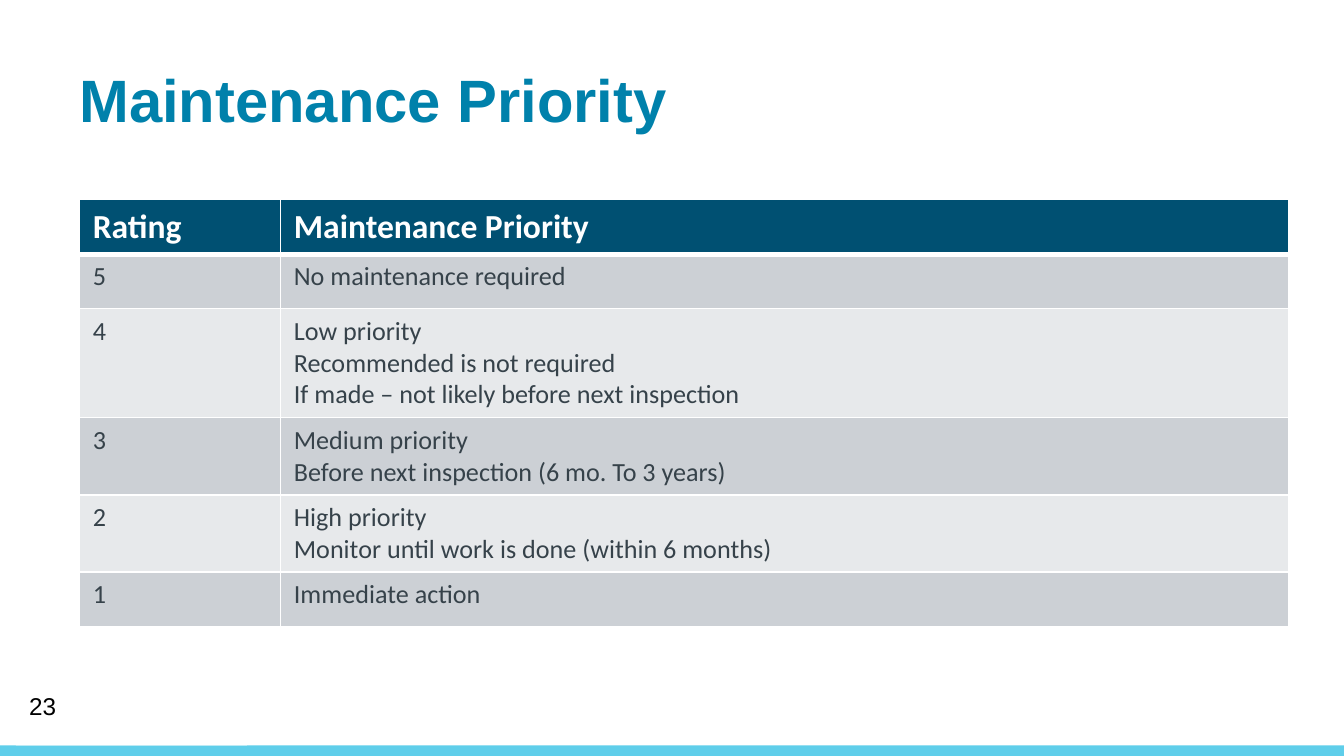
from pptx import Presentation
from pptx.dml.color import RGBColor
from pptx.enum.shapes import MSO_SHAPE as Shape
from pptx.enum.text import MSO_ANCHOR as Anchor
from pptx.oxml import parse_xml
from pptx.oxml.ns import nsdecls
from pptx.util import Cm, Pt

WHITE = RGBColor(0xFF, 0xFF, 0xFF)
BLACK = RGBColor(0x00, 0x00, 0x00)
SKY = RGBColor(0x5F, 0xCE, 0xEA)
BLUE = RGBColor(0x00, 0x81, 0xAB)
NAVY = RGBColor(0x00, 0x50, 0x72)
SLATE = RGBColor(0x36, 0x42, 0x4A)
BANDS = (RGBColor(0xE7, 0xE9, 0xEB), RGBColor(0xCC, 0xD0, 0xD5))

TITLE_FONT = {"name": "Arial", "size": Pt(32), "bold": True}
NUMBER_FONT = {"name": "Arial", "size": Pt(13), "bold": False}
HEADER_FONT = {"name": "Calibri", "size": Pt(18), "bold": True}
BODY_FONT = {"name": "Calibri", "size": Pt(14), "bold": False}

COLUMN_WIDTHS = (3.8, 19.05)
ROW_HEIGHT = 1.03
RATINGS = [
    ("Rating", "Maintenance Priority"),
    ("5", "No maintenance required"),
    ("4", "Low priority\nRecommended is not required\n"
          "If made – not likely before next inspection"),
    ("3", "Medium priority\nBefore next inspection (6 mo. To 3 years)"),
    ("2", "High priority\nMonitor until work is done (within 6 months)"),
    ("1", "Immediate action"),
]


def write(frame, text, font, color):
    frame.text = text
    for paragraph in frame.paragraphs:
        for run in paragraph.runs:
            for name, value in font.items():
                setattr(run.font, name, value)
            run.font.color.rgb = color


def add_bar(slide, left, top, width, height, color):
    bar = slide.shapes.add_shape(
        Shape.RECTANGLE, Cm(left), Cm(top), Cm(width), Cm(height))
    bar.shadow.inherit = False
    bar.fill.solid()
    bar.fill.fore_color.rgb = color
    bar.line.fill.background()


def add_label(slide, box, text, font, color, layout):
    frame = slide.shapes.add_textbox(*map(Cm, box)).text_frame
    for name, value in layout.items():
        setattr(frame, name, value)
    write(frame, text, font, color)


def add_borders(cell, widths):
    for side, width in widths.items():
        cell._tc.get_or_add_tcPr().append(parse_xml(
            f'<a:ln{side} {nsdecls("a")} w="{Pt(width)}"><a:solidFill>'
            f'<a:srgbClr val="{WHITE}"/></a:solidFill></a:ln{side}>'))


def add_ratings(slide, left, top):
    table = slide.shapes.add_table(
        len(RATINGS), len(COLUMN_WIDTHS), Cm(left), Cm(top),
        Cm(sum(COLUMN_WIDTHS)), Cm(ROW_HEIGHT * len(RATINGS))).table
    for column, width in zip(table.columns, COLUMN_WIDTHS):
        column.width = Cm(width)
    for i, entries in enumerate(RATINGS):
        table.rows[i].height = Cm(ROW_HEIGHT)
        header = i == 0
        for j, text in enumerate(entries):
            cell = table.cell(i, j)
            add_borders(cell, {"L": 1, "R": 1, "T": 3 if i == 1 else 1,
                               "B": 3 if header else 1})
            cell.fill.solid()
            cell.fill.fore_color.rgb = NAVY if header else BANDS[i % 2]
            write(cell.text_frame, text,
                  HEADER_FONT if header else BODY_FONT,
                  WHITE if header else SLATE)


def main():
    deck = Presentation()
    deck.slide_width, deck.slide_height = Cm(25.4), Cm(14.28)
    slide = deck.slides.add_slide(deck.slide_layouts[6])
    add_bar(slide, 0, 14.08, 25.4, 0.2, SKY)
    add_bar(slide, 0.3, 13.76, 4.37, 0.32, WHITE)
    add_ratings(slide, 1.5, 3.77)
    add_label(slide, (1.5, 0.94, 22.83, 1.45), "Maintenance Priority",
              TITLE_FONT, BLUE,
              {"word_wrap": True, "margin_left": 0, "margin_top": Cm(0.25)})
    add_label(slide, (0.3, 12.95, 5.72, 0.76), "23", NUMBER_FONT, BLACK,
              {"word_wrap": True, "vertical_anchor": Anchor.MIDDLE})
    deck.save("out.pptx")


if __name__ == "__main__":
    main()
